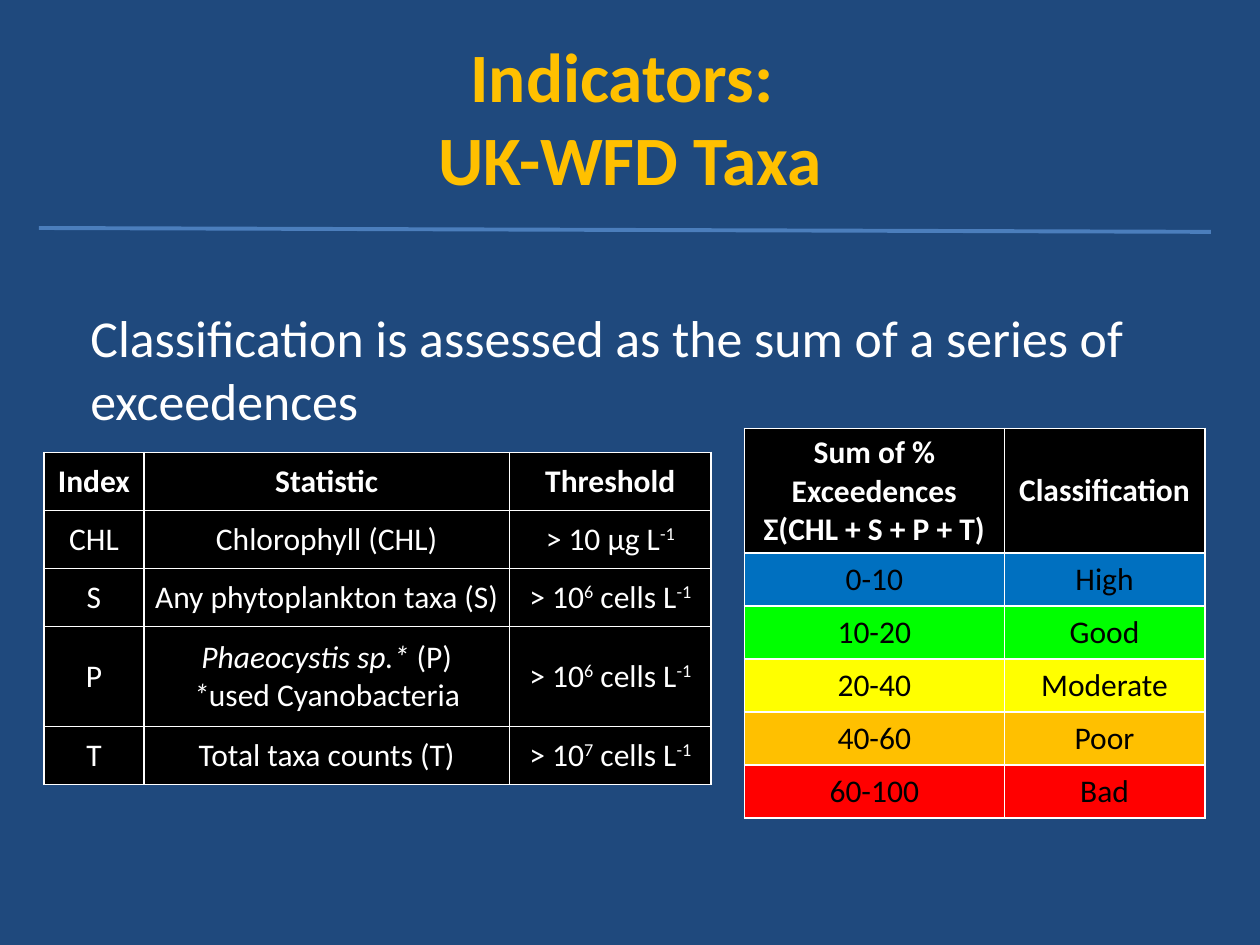
from dataclasses import dataclass

from lxml import etree
from pptx import Presentation
from pptx.dml.color import RGBColor
from pptx.enum.shapes import MSO_CONNECTOR
from pptx.enum.text import MSO_ANCHOR, PP_ALIGN
from pptx.oxml.ns import qn
from pptx.util import Pt

CENTER = PP_ALIGN.CENTER
MIDDLE = MSO_ANCHOR.MIDDLE
STRAIGHT = MSO_CONNECTOR.STRAIGHT

NAVY = RGBColor(0x1F, 0x49, 0x7D)
GOLD = RGBColor(0xFF, 0xC0, 0x00)
WHITE = RGBColor(0xFF, 0xFF, 0xFF)
BLACK = RGBColor(0x00, 0x00, 0x00)
RULE_BLUE = RGBColor(0x4B, 0x7E, 0xBC)
BLUE = RGBColor(0x00, 0x70, 0xC0)
GREEN = RGBColor(0x00, 0xFF, 0x00)
YELLOW = RGBColor(0xFF, 0xFF, 0x00)
RED = RGBColor(0xFF, 0x00, 0x00)

FONT = "Calibri"


@dataclass(frozen=True)
class Run:
    text: str
    sup: bool = False
    italic: bool = False


Cell = list[list[Run]]


@dataclass(frozen=True)
class Row:
    cells: list[Cell]
    height: float
    fill: RGBColor = BLACK
    color: RGBColor = WHITE
    bold: bool = False


def plain(*lines: str) -> Cell:
    return [[Run(line)] for line in lines]


def cell_count(power: str) -> Cell:
    return [[Run("> 10"), Run(power, sup=True), Run(" cells L"), Run("-1", sup=True)]]


def style_font(font, size: float, color: RGBColor, bold: bool = False) -> None:
    font.name = FONT
    font.size = Pt(size)
    font.bold = bold
    font.color.rgb = color


def add_borders(cell, color: RGBColor, width: float) -> None:
    tcPr = cell._tc.get_or_add_tcPr()
    for side in ("lnL", "lnR", "lnT", "lnB"):
        ln = etree.SubElement(tcPr, qn(f"a:{side}"), w=str(Pt(width)))
        fill = etree.SubElement(ln, qn("a:solidFill"))
        etree.SubElement(fill, qn("a:srgbClr"), val=str(color))


def fill_cell(cell, content: Cell, row: Row) -> None:
    add_borders(cell, WHITE, 1)
    cell.fill.solid()
    cell.fill.fore_color.rgb = row.fill
    cell.vertical_anchor = MIDDLE
    cell.margin_left = cell.margin_right = Pt(5)
    cell.margin_top = cell.margin_bottom = Pt(3)
    tf = cell.text_frame
    for i, line in enumerate(content):
        p = tf.add_paragraph() if i else tf.paragraphs[0]
        p.alignment = CENTER
        style_font(p.font, 18, row.color, row.bold)
        for run in line:
            r = p.add_run()
            r.text = run.text
            if run.italic:
                r.font.italic = True
            if run.sup:
                r._r.get_or_add_rPr().set("baseline", "30000")


def add_grid(slide, left: float, top: float, widths: list[float], rows: list[Row]) -> None:
    height = sum(row.height for row in rows)
    table = slide.shapes.add_table(
        len(rows), len(widths), Pt(left), Pt(top), Pt(sum(widths)), Pt(height)
    ).table
    for col, width in zip(table.columns, widths):
        col.width = Pt(width)
    for i, row in enumerate(rows):
        table.rows[i].height = Pt(row.height)
        for j, content in enumerate(row.cells):
            fill_cell(table.cell(i, j), content, row)


def add_title(slide) -> None:
    sp = slide.shapes.title
    sp.left, sp.top, sp.width, sp.height = Pt(36), Pt(21.6), Pt(648), Pt(90)
    tf = sp.text_frame
    tf.vertical_anchor = MIDDLE
    p = tf.paragraphs[0]
    p.text = "Indicators: \vUK-WFD Taxa"
    p.alignment = CENTER
    style_font(p.font, 39.6, GOLD, True)


def add_statement(slide) -> None:
    sp = slide.shapes.add_textbox(Pt(44.6), Pt(171.4), Pt(620.6), Pt(74.2))
    tf = sp.text_frame
    tf.word_wrap = True
    p = tf.paragraphs[0]
    p.text = "Classification is assessed as the sum of a series of exceedences"
    style_font(p.font, 29.6, WHITE)


def add_rule(slide) -> None:
    line = slide.shapes.add_connector(STRAIGHT, Pt(22.3), Pt(130.3), Pt(692), Pt(132.5))
    line.line.color.rgb = RULE_BLUE
    line.line.width = Pt(2.25)
    etree.SubElement(line._element.spPr, qn("a:effectLst"))


def main() -> None:
    prs = Presentation()
    prs.slide_width, prs.slide_height = Pt(720), Pt(540)
    slide = prs.slides.add_slide(prs.slide_layouts[5])
    slide.background.fill.solid()
    slide.background.fill.fore_color.rgb = NAVY

    chlorophyll = [[Run("> 10 µg L"), Run("-1", sup=True)]]
    phaeocystis = [
        [Run("Phaeocystis sp.* ", italic=True), Run("(P)")],
        [Run("*", italic=True), Run("used Cyanobacteria")],
    ]
    indices = [
        Row([plain("Index"), plain("Statistic"), plain("Threshold")], 33.2, bold=True),
        Row([plain("CHL"), plain("Chlorophyll (CHL)"), chlorophyll], 33.2),
        Row([plain("S"), plain("Any phytoplankton taxa (S)"), cell_count("6")], 33.2),
        Row([plain("P"), phaeocystis, cell_count("6")], 57),
        Row([plain("T"), plain("Total taxa counts (T)"), cell_count("7")], 33.2),
    ]
    header = [plain("Sum of % Exceedences", "Σ(CHL + S + P + T)"), plain("Classification")]
    classes = [
        ("0-10", "High", BLUE),
        ("10-20", "Good", GREEN),
        ("20-40", "Moderate", YELLOW),
        ("40-60", "Poor", GOLD),
        ("60-100", "Bad", RED),
    ]
    grades = [Row(header, 71.2, bold=True)] + [
        Row([plain(total), plain(grade)], 30.3, fill, BLACK) for total, grade, fill in classes
    ]

    add_title(slide)
    add_statement(slide)
    add_grid(slide, 25.2, 258.5, [57, 209, 115.2], indices)
    add_grid(slide, 425.4, 244.8, [148.5, 114.6], grades)
    add_rule(slide)
    prs.save("out.pptx")


if __name__ == "__main__":
    main()
